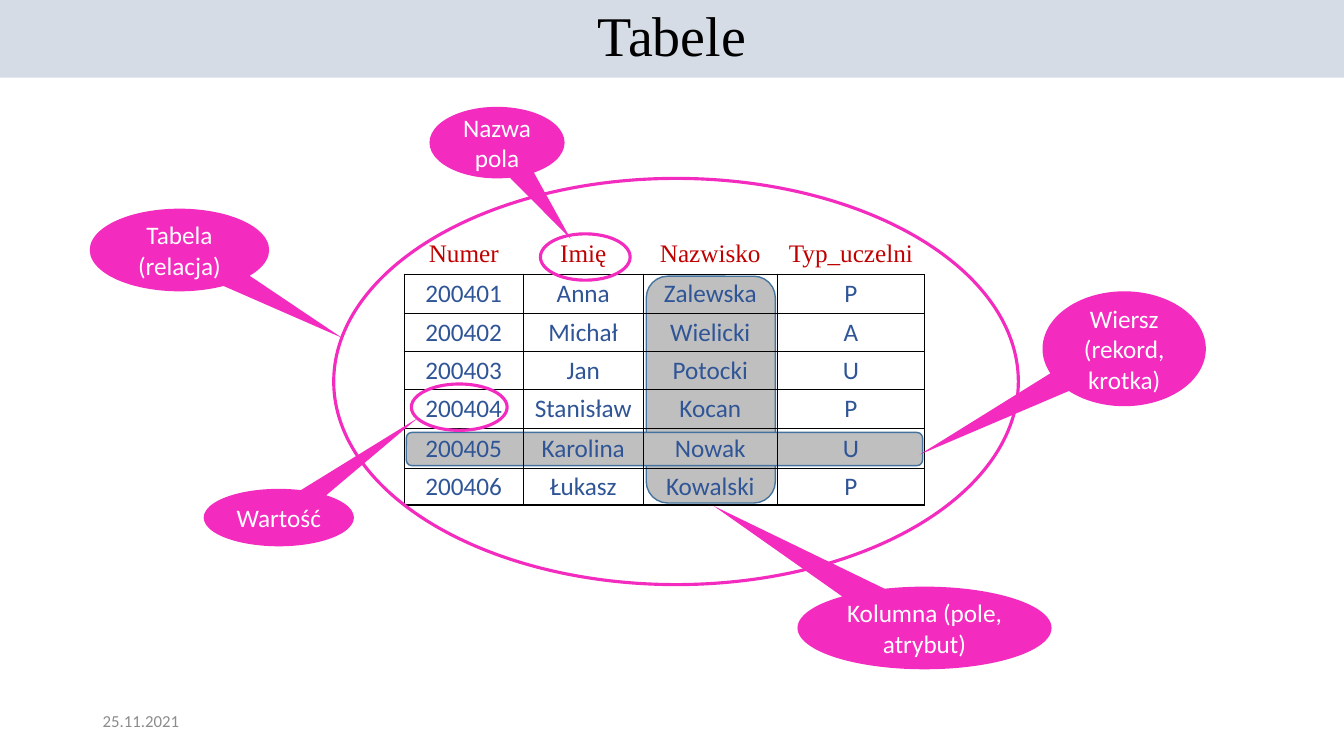
from dataclasses import dataclass
from itertools import pairwise

from lxml.etree import SubElement
from pptx import Presentation
from pptx.dml.color import RGBColor
from pptx.enum.shapes import MSO_SHAPE
from pptx.enum.text import MSO_ANCHOR, PP_ALIGN
from pptx.oxml.ns import qn
from pptx.util import Inches, Pt


@dataclass(frozen=True)
class Theme:
    band: str = "D6DCE5"
    pink: str = "F32BBF"
    grey: str = "BFBFBF"
    edge: str = "43739E"
    header: str = "C00000"
    value: str = "2F5597"
    date: str = "8C8C8C"
    black: str = "000000"
    white: str = "FFFFFF"
    serif: str = "Times New Roman"
    sans: str = "Calibri"
    title_size: int = 40
    body_size: int = 18
    date_size: int = 12


class SlideBuilder:
    def __init__(self, slide, theme):
        self.s = slide
        self.t = theme

    def add_text(self, tf, text, color, font=None, size=None, align=PP_ALIGN.CENTER):
        p = tf.paragraphs[0]
        p.alignment = align
        r = p.add_run()
        r.text = text
        r.font.name = font or self.t.sans
        r.font.size = Pt(size or self.t.body_size)
        r.font.color.rgb = RGBColor.from_string(color)
        return p

    def shape(self, kind, box, fill=None, line=None, width=1):
        sp = self.s.shapes.add_shape(kind, *map(Inches, box))
        sp.shadow.inherit = False
        sp.text_frame.word_wrap = True
        sp.text_frame.vertical_anchor = MSO_ANCHOR.MIDDLE
        if fill:
            sp.fill.solid()
            sp.fill.fore_color.rgb = RGBColor.from_string(fill)
        else:
            sp.fill.background()
        if line:
            sp.line.color.rgb = RGBColor.from_string(line)
            sp.line.width = Pt(width)
        else:
            sp.line.fill.background()
        return sp

    def title(self, text, box):
        sp = self.shape(MSO_SHAPE.RECTANGLE, box, self.t.band)
        p = self.add_text(sp.text_frame, text, self.t.black, self.t.serif, self.t.title_size)
        p.line_spacing = 0.9

    def date(self, text, box):
        tf = self.s.shapes.add_textbox(*map(Inches, box)).text_frame
        tf.word_wrap = True
        tf.vertical_anchor = MSO_ANCHOR.MIDDLE
        self.add_text(tf, text, self.t.date, size=self.t.date_size, align=PP_ALIGN.LEFT)

    def highlight(self, box):
        self.shape(MSO_SHAPE.ROUNDED_RECTANGLE, box, self.t.grey, self.t.edge)

    def ring(self, box):
        self.shape(MSO_SHAPE.OVAL, box, line=self.t.pink, width=2.25)

    def callout(self, text, box, tip):
        sp = self.shape(MSO_SHAPE.OVAL_CALLOUT, box, self.t.pink)
        left, top, width, height = box
        sp.adjustments[0] = (tip[0] - left) / width - 0.5
        sp.adjustments[1] = (tip[1] - top) / height - 0.5
        self.add_text(sp.text_frame, text, self.t.white)

    def border(self, cell, side, width):
        ln = SubElement(cell._tc.get_or_add_tcPr(), qn(f"a:ln{side}"), w=str(Pt(width)))
        if width:
            fill = SubElement(ln, qn("a:solidFill"))
            SubElement(fill, qn("a:srgbClr"), val=self.t.black)
        else:
            SubElement(ln, qn("a:noFill"))

    def table(self, rows, xs, ys):
        box = xs[0], ys[0], xs[-1] - xs[0], ys[-1] - ys[0]
        table = self.s.shapes.add_table(len(rows), len(rows[0]), *map(Inches, box)).table
        table.first_row = table.horz_banding = False
        for column, (a, b) in zip(table.columns, pairwise(xs)):
            column.width = Inches(b - a)
        for row, (a, b) in zip(table.rows, pairwise(ys)):
            row.height = Inches(b - a)
        last_row, last_col = len(rows) - 1, len(rows[0]) - 1
        for i, row in enumerate(rows):
            for j, text in enumerate(row):
                cell = table.cell(i, j)
                cell.margin_left = cell.margin_right = 0
                cell.margin_top = cell.margin_bottom = 0
                cell.vertical_anchor = MSO_ANCHOR.MIDDLE
                # Header has no frame; the body has a thicker outline
                self.border(cell, "L", 0 if i == 0 else 1 if j == 0 else 0.5)
                self.border(cell, "R", 0 if i == 0 else 1 if j == last_col else 0.5)
                self.border(cell, "T", 0 if i == 0 else 1 if i == 1 else 0.5)
                self.border(cell, "B", 1 if i in (0, last_row) else 0.5)
                cell.fill.background()
                color, font = (self.t.value, self.t.sans) if i else (self.t.header, self.t.serif)
                self.add_text(cell.text_frame, text, color, font)


STUDENTS = [
    ("Numer", "Imię", "Nazwisko", "Typ_uczelni"),
    ("200401", "Anna", "Zalewska", "P"),
    ("200402", "Michał", "Wielicki", "A"),
    ("200403", "Jan", "Potocki", "U"),
    ("200404", "Stanisław", "Kocan", "P"),
    ("200405", "Karolina", "Nowak", "U"),
    ("200406", "Łukasz", "Kowalski", "P"),
]
COLUMN_EDGES = [4.01, 5.19, 6.38, 7.71, 9.17]
ROW_EDGES = [2.32, 2.72, 3.11, 3.49, 3.86, 4.25, 4.65, 5.01]


def main():
    prs = Presentation()
    prs.slide_width, prs.slide_height = Inches(13.33), Inches(7.5)
    b = SlideBuilder(prs.slides.add_slide(prs.slide_layouts[6]), Theme())

    # Highlighted column and row, behind the table
    b.highlight((6.41, 2.74, 1.28, 2.25))
    b.highlight((4.03, 4.29, 5.12, 0.33))

    # Title band and date
    b.title("Tabele", (0, 0, 13.33, 0.77))
    b.date("25.11.2021", (0.92, 6.95, 3, 0.4))

    # Student table
    b.table(STUDENTS, COLUMN_EDGES, ROW_EDGES)

    # Callouts and the rings they point to
    b.callout("Kolumna (pole, atrybut)", (7.91, 5.82, 2.52, 0.82), (7.08, 5.02))
    b.callout("Wiersz (rekord, krotka)", (10.34, 2.89, 1.62, 1.14), (9.12, 4.51))
    b.ring((5.36, 2.32, 0.89, 0.46))
    b.callout("Nazwa pola", (4.26, 1.06, 1.34, 0.71), (5.66, 2.37))
    b.ring((4.08, 3.81, 0.95, 0.46))
    b.callout("Wartość", (2.02, 4.85, 1.49, 0.57), (4.14, 4.15))
    b.ring((3.31, 1.77, 6.79, 4.03))
    b.callout("Tabela (relacja)", (0.89, 2.07, 1.78, 0.82), (3.39, 3.35))

    prs.save("out.pptx")


if __name__ == "__main__":
    main()
